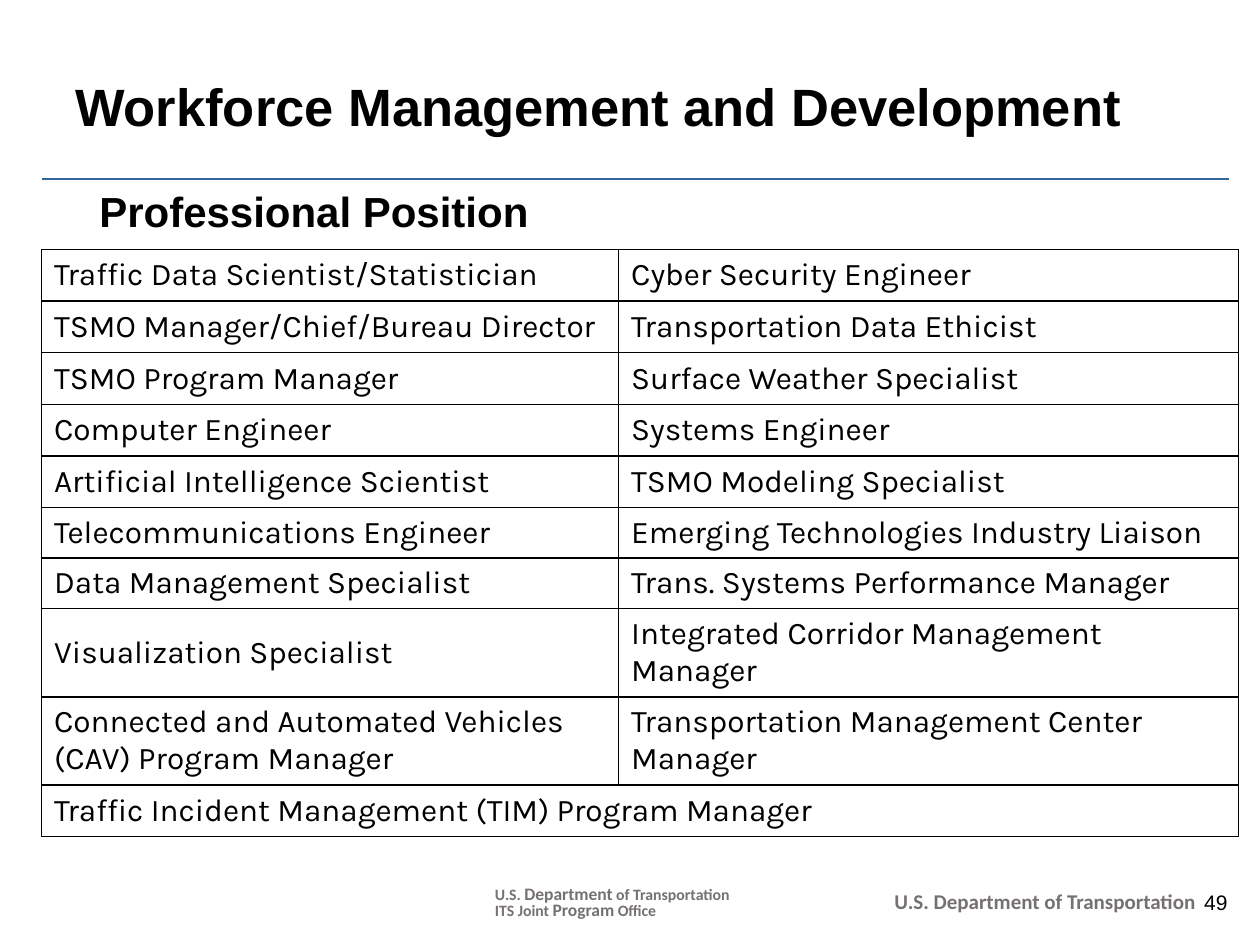
from lxml import etree
from pptx import Presentation
from pptx.dml.color import RGBColor
from pptx.enum.shapes import MSO_CONNECTOR
from pptx.enum.text import MSO_ANCHOR, PP_ALIGN
from pptx.oxml.ns import qn
from pptx.util import Inches, Pt

STRAIGHT = MSO_CONNECTOR.STRAIGHT
TOP, MIDDLE = MSO_ANCHOR.TOP, MSO_ANCHOR.MIDDLE
LEFT, RIGHT = PP_ALIGN.LEFT, PP_ALIGN.RIGHT
COLORS = {"text": "000000", "footer": "767171", "rule": "336699"}


def add_run(paragraph, text, size, font="Arial", color="text", bold=False):
    run = paragraph.add_run()
    run.text = text
    run.font.size = Pt(size)
    run.font.name = font
    run.font.bold = bold
    run.font.color.rgb = RGBColor.from_string(COLORS[color])


def add_text(box, lines, font="Arial", color="text", bold=True,
             anchor=TOP, align=LEFT, spacing=None):
    frame = slide.shapes.add_textbox(*map(Inches, box)).text_frame
    frame.word_wrap = True
    frame.vertical_anchor = anchor
    for index, runs in enumerate(lines):
        paragraph = frame.add_paragraph() if index else frame.paragraphs[0]
        paragraph.alignment = align
        if spacing:
            paragraph.line_spacing = Pt(spacing)
        for text, size in runs:
            add_run(paragraph, text, size, font, color, bold)
    return frame


prs = Presentation()
prs.slide_width = Inches(10)
prs.slide_height = Inches(7.5)
slide = prs.slides.add_slide(prs.slide_layouts[6])

rule = slide.shapes.add_connector(
    STRAIGHT, Inches(0.33), Inches(1.42), Inches(9.75), Inches(1.42))
rule.line.color.rgb = RGBColor.from_string(COLORS["rule"])
rule.line.width = Pt(1.5)
etree.SubElement(rule.line._get_or_add_ln().getparent(), qn("a:effectLst"))

add_text((9.42, 7.01, 0.42, 0.3), [[("49", 12)]], bold=False, align=RIGHT)
footer = {"font": "Calibri", "color": "footer", "spacing": 9}
add_text((7, 7.08, 2.75, 0.24), [[("U.S. Department of Transportation", 12)]], **footer)
add_text((3.83, 7, 2.07, 0.36), [
    [("U.S. ", 9), ("Department", 10), (" of Transportation", 9)],
    [("ITS Joint ", 9), ("Program", 10), (" Office", 9)],
], **footer)

add_text((0.5, 0.42, 9, 0.83), [[("Workforce Management and Development", 30)]],
         anchor=MIDDLE)
heading = add_text((0.5, 1.42, 9, 0.5), [[("Professional Position", 24)]])
heading.paragraphs[0]._p.get_or_add_pPr().set("marL", str(Inches(0.19)))

positions = [
    ("Traffic Data Scientist/Statistician", "Cyber Security Engineer"),
    ("TSMO Manager/Chief/Bureau Director", "Transportation Data Ethicist"),
    ("TSMO Program Manager", "Surface Weather Specialist"),
    ("Computer Engineer", "Systems Engineer"),
    ("Artificial Intelligence Scientist", "TSMO Modeling Specialist"),
    ("Telecommunications Engineer", "Emerging Technologies Industry Liaison"),
    ("Data Management Specialist", "Trans. Systems Performance Manager"),
    ("Visualization Specialist", "Integrated Corridor Management Manager"),
    ("Connected and Automated Vehicles (CAV) Program Manager",
     "Transportation Management Center Manager"),
    ("Traffic Incident Management (TIM) Program Manager", ""),
]
row_heights = [0.41] * 5 + [0.29, 0.35, 0.28, 0.66, 0.41]

table = slide.shapes.add_table(
    len(positions), 2, Inches(0.33), Inches(1.98), Inches(9.5), Inches(4.04)).table
table.first_row = False
table.horz_banding = False
for column, width in zip(table.columns, (4.58, 4.92)):
    column.width = Inches(width)

for r, (titles, height) in enumerate(zip(positions, row_heights)):
    table.rows[r].height = Inches(height)
    for c, title in enumerate(titles):
        cell = table.cell(r, c)
        cell.vertical_anchor = MIDDLE
        if title:
            add_run(cell.text_frame.paragraphs[0], title, 18, "Karla")
        properties = cell._tc.get_or_add_tcPr()
        for side in ("lnL", "lnR", "lnT", "lnB"):
            border = etree.SubElement(properties, qn(f"a:{side}"), w=str(Pt(1)))
            fill = etree.SubElement(border, qn("a:solidFill"))
            etree.SubElement(fill, qn("a:srgbClr"), val=COLORS["text"])
        cell.fill.background()

last = len(positions) - 1
table.cell(last, 0).merge(table.cell(last, 1))

prs.save("out.pptx")
